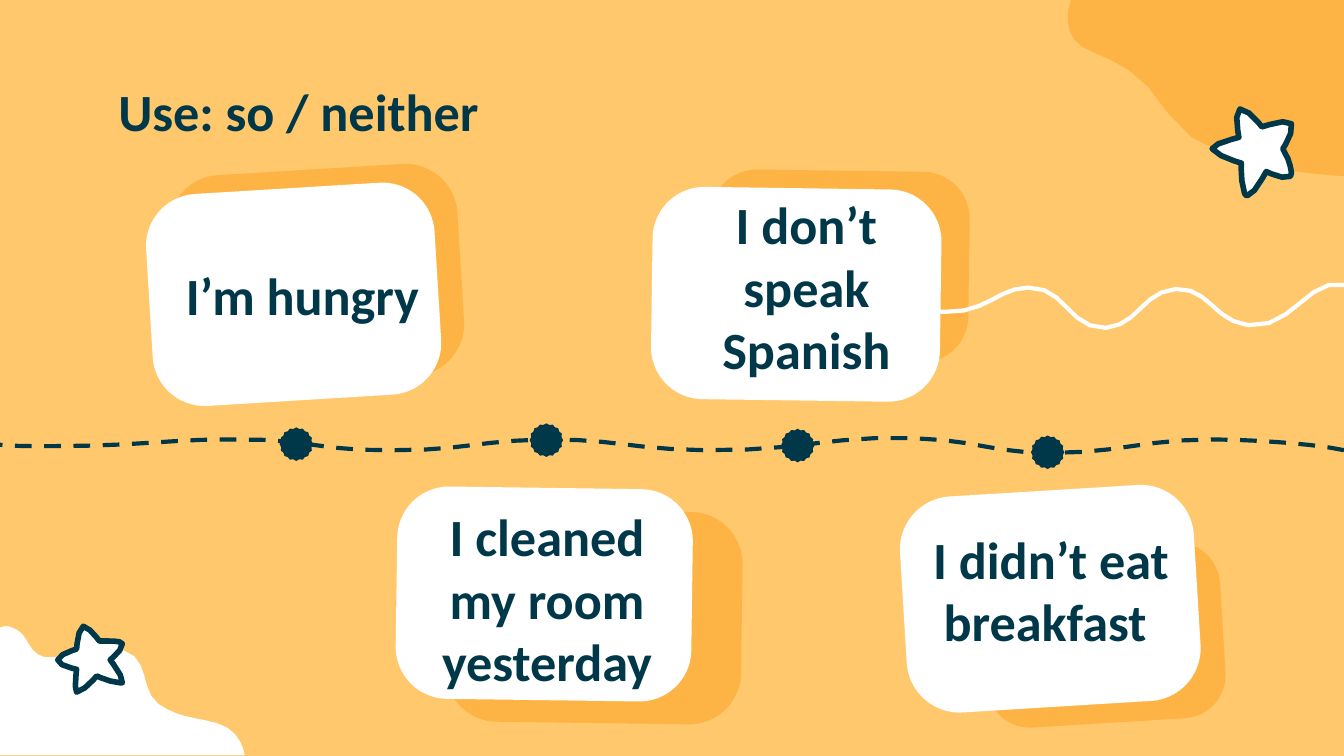
from pptx import Presentation
from pptx.dml.color import RGBColor
from pptx.enum.dml import MSO_LINE
from pptx.enum.shapes import MSO_SHAPE
from pptx.enum.text import MSO_ANCHOR, MSO_AUTO_SIZE, PP_ALIGN
from pptx.util import Pt

PX = 9144  # 100 px to the inch
SAND = RGBColor(0xFF, 0xC8, 0x6D)
ORANGE = RGBColor(0xFE, 0xB4, 0x44)
NAVY = RGBColor(0x00, 0x38, 0x49)
WHITE = RGBColor(0xFF, 0xFF, 0xFF)
LEFT, CENTER = PP_ALIGN.LEFT, PP_ALIGN.CENTER
TOP, NO_FIT = MSO_ANCHOR.TOP, MSO_AUTO_SIZE.NONE
ROUNDED, SCALLOPED = MSO_SHAPE.ROUNDED_RECTANGLE, MSO_SHAPE.STAR_16_POINT
DASH = MSO_LINE.DASH


def write_text(shape, text, align=CENTER, size=28, color=NAVY, space_after=8):
    frame = shape.text_frame
    frame.word_wrap, frame.auto_size, frame.vertical_anchor = True, NO_FIT, TOP
    frame.margin_left = frame.margin_right = 10 * PX
    frame.margin_top = frame.margin_bottom = 10 * PX
    paragraph = frame.paragraphs[0]
    paragraph.alignment = align
    paragraph.space_before, paragraph.space_after = Pt(0), Pt(space_after)
    run = paragraph.add_run()
    run.text = text
    run.font.name, run.font.size, run.font.bold = "Calibri", Pt(size), True
    run.font.color.rgb = color


def add_curve(points, corners=(), steps=6, fill=None, line=None, width=2.25):
    """Draw cubic curves: a start, then two controls and an end for each."""
    outline = [points[0]]
    for first in range(0, len(points) - 1, 3):
        a, b, c, d = points[first:first + 4]
        for step in range(1, steps + 1):
            t = step / steps
            weights = (1 - t) ** 3, 3 * t * (1 - t) ** 2, 3 * t * t * (1 - t), t ** 3
            outline.append(tuple(sum(w * p[axis] for w, p in zip(weights, (a, b, c, d)))
                                 for axis in (0, 1)))
    outline = [(x * PX, y * PX) for x, y in [*outline, *corners]]
    builder = slide.shapes.build_freeform(*outline[0])
    builder.add_line_segments(outline[1:], close=fill is not None)
    shape = builder.convert_to_shape()
    shape.shadow.inherit = False
    if fill is None:
        shape.fill.background()
    else:
        shape.fill.solid()
        shape.fill.fore_color.rgb = fill
    if line is None:
        shape.line.fill.background()
    else:
        shape.line.color.rgb = line
        shape.line.width = Pt(width)
    return shape


presentation = Presentation()
presentation.slide_width = 1000 * PX
presentation.slide_height = presentation.slide_width * 9 // 16
slide = presentation.slides.add_slide(presentation.slide_layouts[5])
slide.background.fill.solid()
slide.background.fill.fore_color.rgb = SAND

# Corner blobs
add_curve([(0, 467), (0, 467), (2, 466), (5, 466), (7, 466), (9, 467), (13, 469),
           (21, 473), (21, 486), (33, 489), (48, 491), (65, 479), (92, 484),
           (112, 490), (104, 514), (118, 524), (133, 534), (142, 533), (161, 538),
           (180, 543), (182, 562), (182, 562)], corners=[(0, 562)], fill=WHITE)
add_curve([(1000, 131), (1000, 131), (893, 128), (868, 83), (842, 39), (807, 43),
           (799, 29), (790, 16), (797, 0), (797, 0)], corners=[(1000, 0)], fill=ORANGE)

# Dashed timeline
timeline = add_curve(
    [(1000, 335), (983, 331), (936, 327), (902, 327), (851, 327), (833, 337), (783, 337),
     (735, 337), (732, 328), (679, 326), (616, 324), (596, 336), (523, 335),
     (467, 334), (461, 327), (407, 327), (353, 328), (347, 335), (294, 335),
     (235, 336), (231, 326), (170, 327), (124, 327), (104, 332), (39, 332),
     (22, 332), (9, 332), (0, 331)], line=NAVY)
timeline.line.dash_style = DASH

# Cards, each with an orange card behind it
cards = [
    (356.5, (732, 407, 178, 131), (672, 365, 219, 161)),
    (0.8, (332, 380, 220, 158), (295, 363, 220, 158)),
    (0.8, (528, 127, 193, 142), (485, 140, 215, 158)),
    (356.5, (128, 126, 215, 158), (111, 140, 215, 158)),
]
for rotation, *boxes in cards:
    for box, color in zip(boxes, (ORANGE, WHITE)):
        card = slide.shapes.add_shape(ROUNDED, *(length * PX for length in box))
        card.adjustments[0] = 0.245
        card.rotation = rotation
        card.shadow.inherit = False
        card.fill.solid()
        card.fill.fore_color.rgb = color
        card.line.fill.background()

# Scalloped timeline markers
for left, top in [(208, 318), (394, 315), (581, 319), (767, 324)]:
    marker = slide.shapes.add_shape(SCALLOPED, left * PX, top * PX, 25 * PX, 25 * PX)
    marker.adjustments[0] = 0.46
    marker.shadow.inherit = False
    marker.fill.solid()
    marker.fill.fore_color.rgb = NAVY
    marker.line.fill.background()

# White wave running off the right edge
add_curve([(1152, 243), (1143, 231), (1122, 217), (1106, 216), (1082, 216), (1074, 250),
           (1050, 250), (1028, 249), (1027, 218), (1002, 212), (973, 205), (963, 245),
           (929, 242), (903, 239), (900, 214), (875, 215), (850, 217), (847, 242),
           (823, 244), (795, 245), (793, 213), (765, 214), (743, 214), (734, 233),
           (704, 232), (696, 232), (690, 231), (686, 230)], line=WHITE)

# Stars
right_star = add_curve(
    [(945, 82), (941, 79), (928, 96), (928, 96), (928, 96), (911, 90), (907, 94),
     (904, 98), (918, 112), (918, 112), (918, 112), (903, 128), (906, 130),
     (911, 133), (930, 127), (930, 127), (930, 127), (938, 140), (944, 144),
     (945, 145), (946, 145), (947, 145), (951, 144), (949, 122), (949, 122),
     (949, 122), (965, 120), (966, 115), (967, 113), (961, 108), (957, 105),
     (953, 103), (950, 101), (950, 101), (950, 101), (950, 85), (945, 82)],
    steps=3, fill=WHITE, line=NAVY, width=3)
right_star.rotation = 33.4
add_curve(
    [(62, 466), (58, 467), (57, 483), (57, 483), (57, 483), (43, 487), (43, 491),
     (42, 495), (57, 498), (57, 498), (57, 498), (55, 515), (57, 515),
     (62, 515), (72, 503), (72, 503), (72, 503), (83, 508), (89, 508),
     (90, 508), (91, 508), (91, 508), (93, 505), (82, 491), (82, 491),
     (82, 491), (92, 483), (91, 479), (90, 477), (85, 477), (80, 477),
     (77, 477), (74, 477), (74, 477), (74, 477), (66, 466), (62, 466)],
    steps=3, fill=WHITE, line=NAVY, width=3)

# Title
title = slide.shapes.title
title.left, title.top, title.width, title.height = 78 * PX, 49 * PX, 844 * PX, 63 * PX
write_text(title, "Use: so / neither", align=LEFT, space_after=0)

# Card sentences
sentences = [
    ("I’m hungry", 122, 186, 206, 38),
    ("I don’t speak Spanish", 490, 133, 220, 38),
    ("I cleaned my room yesterday", 304, 365, 206, 38),
    ("I didn’t eat breakfast ", 679, 382, 206, 130),
]
for sentence, *box in sentences:
    write_text(slide.shapes.add_textbox(*(length * PX for length in box)), sentence)

presentation.save("out.pptx")
